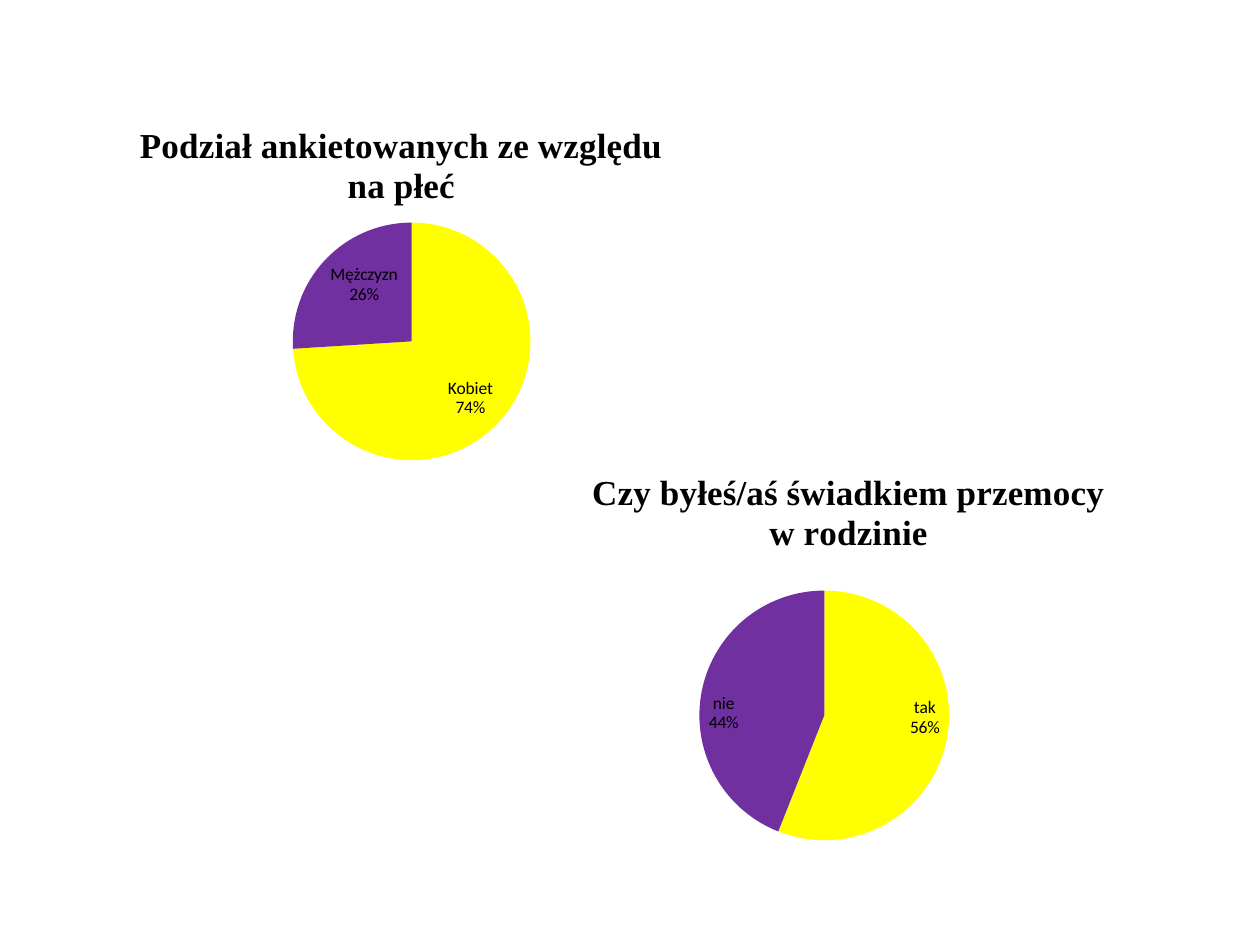
from dataclasses import dataclass

from lxml.etree import SubElement
from pptx import Presentation
from pptx.chart.data import CategoryChartData
from pptx.dml.color import RGBColor
from pptx.enum.chart import XL_CHART_TYPE, XL_LABEL_POSITION
from pptx.oxml import parse_xml
from pptx.oxml.ns import nsdecls, qn
from pptx.util import Inches, Pt


@dataclass(frozen=True)
class Theme:
    text: RGBColor = RGBColor(0, 0, 0)
    slices: tuple = (RGBColor(0xFF, 0xFF, 0), RGBColor(0x70, 0x30, 0xA0))
    head_font: str = "Times New Roman"
    body_font: str = "Calibri"
    head_size: Pt = Pt(20)
    body_size: Pt = Pt(10)


THEME = Theme()

PIES = [
    {
        "title": "Podział ankietowanych ze względu\nna płeć",
        "data": {"Kobiet": 74, "Mężczyzn": 26},
        "box": (0.43, 0.84, 5.51, 3.31),
        "plot": (0.1, 0.28, 0.83, 0.57),
    },
    {
        "title": "Czy byłeś/aś świadkiem przemocy\nw rodzinie",
        "data": {"tak": 56, "nie": 44},
        "box": (3.98, 3.59, 5.51, 3.54),
        "plot": (0.12, 0.31, 0.69, 0.56),
    },
]


def style(item, values):
    for name, value in values.items():
        setattr(item, name, value)


def style_font(font, face, size, bold):
    style(font, {"name": face, "size": size, "bold": bold})
    font.color.rgb = THEME.text


def set_plot(chart, plot):
    """Place the inner plot area, given as fractions of the chart."""
    area = chart.element.find(".//" + qn("c:plotArea"))
    for old in area.findall(qn("c:layout")):
        area.remove(old)
    layout = parse_xml(f"<c:layout {nsdecls('c')}><c:manualLayout/></c:layout>")
    marks = {"layoutTarget": "inner", "xMode": "edge", "yMode": "edge"}
    marks.update(zip("xywh", plot))
    for tag, value in marks.items():
        SubElement(layout[0], qn("c:" + tag)).set("val", str(value))
    area.insert(0, layout)


def add_title(chart, text):
    chart.has_title = True
    frame = chart.chart_title.text_frame
    frame.text = text
    for para in frame.paragraphs:
        for run in para.runs:
            style_font(run.font, THEME.head_font, THEME.head_size, True)
    chart.chart_title.include_in_layout = False


def add_pie(slide, title, data, box, plot):
    source = CategoryChartData()
    source.categories = list(data)
    source.add_series("Series 1", list(data.values()))
    frame = slide.shapes.add_chart(
        XL_CHART_TYPE.PIE, *map(Inches, box), source)
    chart = frame.chart
    chart.has_legend = False
    style_font(chart.font, THEME.body_font, THEME.body_size, False)
    add_title(chart, title)
    set_plot(chart, plot)

    pie = chart.plots[0]
    pie.vary_by_categories = True
    for spot, color in enumerate(THEME.slices):
        fill = pie.series[0].points[spot].format.fill
        fill.solid()
        fill.fore_color.rgb = color

    pie.has_data_labels = True
    labels = pie.data_labels
    style(labels, {
        "show_category_name": True,
        "show_percentage": True,
        "show_value": False,
        "number_format": "0%",
        "number_format_is_linked": False,
        "position": XL_LABEL_POSITION.INSIDE_END,
    })
    style_font(labels.font, THEME.body_font, THEME.body_size, False)


def main():
    deck = Presentation()
    style(deck, {"slide_width": Inches(10), "slide_height": Inches(7.5)})
    slide = deck.slides.add_slide(deck.slide_layouts[6])
    for pie in PIES:
        add_pie(slide, **pie)
    deck.save("out.pptx")


if __name__ == "__main__":
    main()
